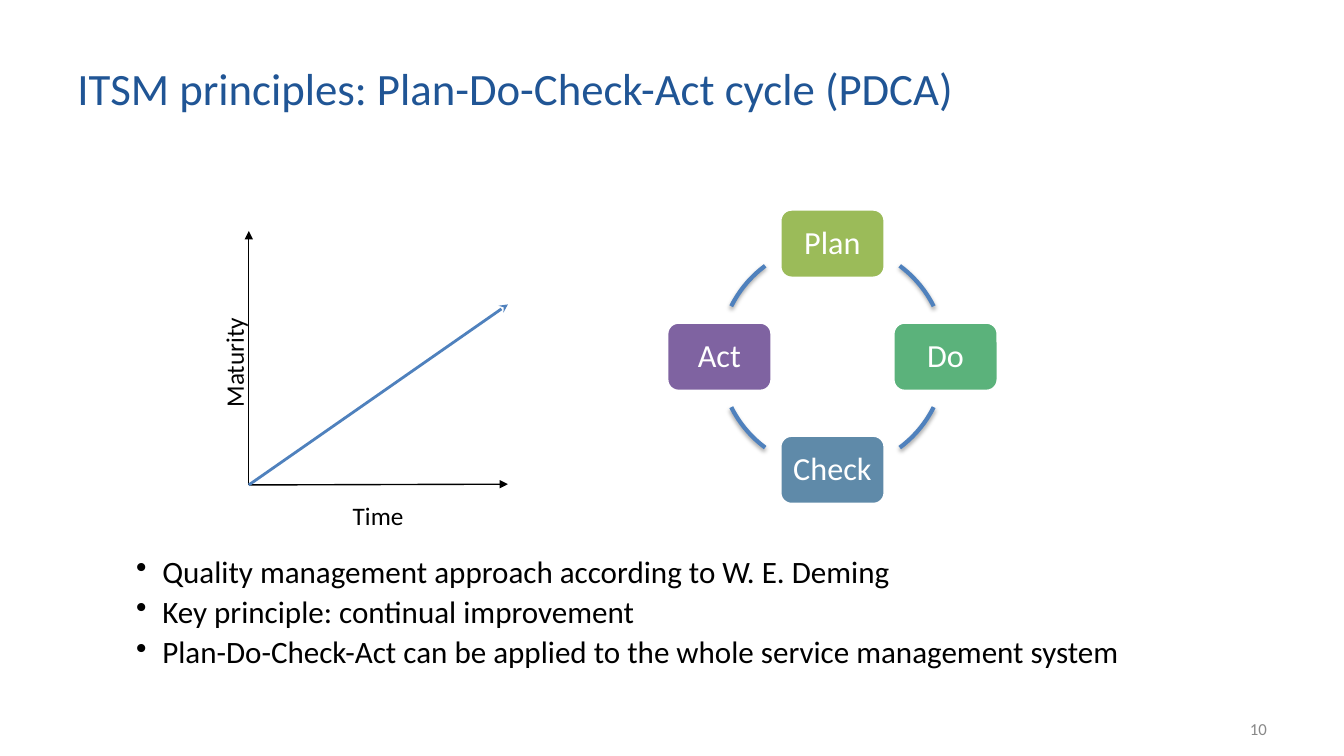
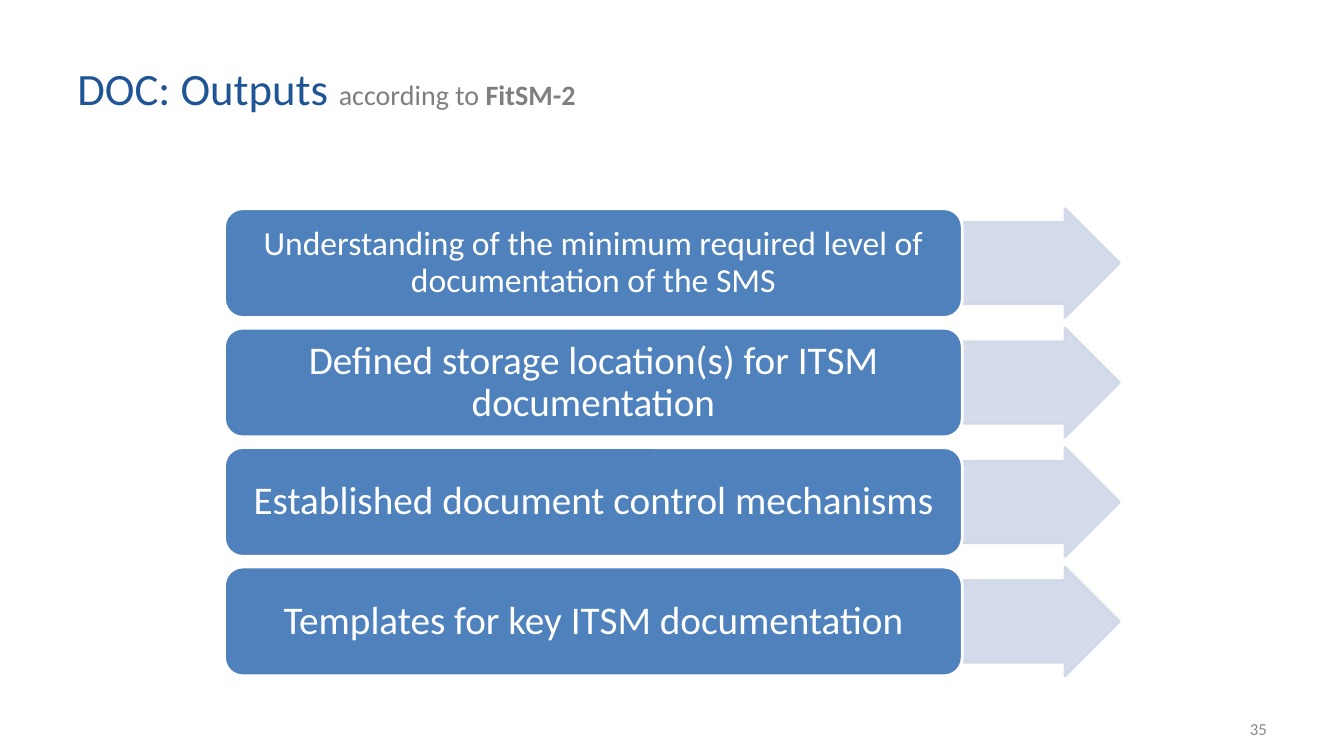
from lxml import etree
from pptx import Presentation
from pptx.dml.color import RGBColor
from pptx.enum.shapes import MSO_CONNECTOR as Connector, MSO_SHAPE as Shape
from pptx.enum.text import MSO_ANCHOR as Anchor, PP_ALIGN as Align
from pptx.oxml import parse_xml
from pptx.oxml.ns import nsdecls, qn
from pptx.util import Cm, Pt

FONT = "Calibri"
COLORS = {
    "title": "205595",
    "subtitle": "7F7F7F",
    "number": "888888",
    "black": "000000",
    "white": "FFFFFF",
    "blue": "4F81BD",
    "pale": "D0D8E8",
    "plan": "9BBB59",
    "do": "5BB27B",
    "check": "5F8AA9",
    "act": "7F63A1",
}
RGB = {name: RGBColor.from_string(value) for name, value in COLORS.items()}


def style_font(font, size, color, bold=None):
    font.name = FONT
    font.size = Pt(size)
    font.color.rgb = RGB[color]
    font.bold = bold


def add_box(slide, kind, left, top, width, height, fill=None, line="white", line_width=2):
    """Add a preset shape, or a wrapping text box if kind is None; lengths in cm."""
    place = [Cm(value) for value in (left, top, width, height)]
    if kind is None:
        box = slide.shapes.add_textbox(*place)
        box.text_frame.word_wrap = True
        return box
    box = slide.shapes.add_shape(kind, *place)
    box.shadow.inherit = False
    if fill:
        box.fill.solid()
        box.fill.fore_color.rgb = RGB[fill]
    else:
        box.fill.background()
    box.line.color.rgb = RGB[line]
    box.line.width = Pt(line_width)
    return box


presentation = Presentation()
presentation.slide_width = Cm(33.87)
presentation.slide_height = Cm(19.05)

# Each title is a list of runs: text, size, colour, bold
pages = [
    ("10", [("ITSM principles: Plan-Do-Check-Act cycle (PDCA)", 32, "title", None)]),
    ("35", [("DOC: Outputs ", 32, "title", None),
            ("according to ", 20, "subtitle", None),
            ("FitSM-2", 20, "subtitle", True)]),
]
slides = []
for number, title_runs in pages:
    slide = presentation.slides.add_slide(presentation.slide_layouts[6])
    slides.append(slide)

    title = add_box(slide, None, 1.7, 0.76, 25.17, 2.92).text_frame
    title.vertical_anchor = Anchor.MIDDLE
    for text, size, color, bold in title_runs:
        run = title.paragraphs[0].add_run()
        run.text = text
        style_font(run.font, size, color, bold)

    footer = add_box(slide, None, 24.28, 17.86, 7.9, 1.02).text_frame
    footer.vertical_anchor = Anchor.MIDDLE
    paragraph = footer.paragraphs[0]
    paragraph.text = number
    paragraph.alignment = Align.RIGHT
    style_font(paragraph.font, 12, "number")

cycle_slide, outputs_slide = slides

# Key points
bullets = [
    "Quality management approach according to W. E. Deming",
    "Key principle: continual improvement",
    "Plan-Do-Check-Act can be applied to the whole service management system",
]
body = add_box(cycle_slide, None, 3.1, 13.89, 27.43, 3.81).text_frame
for index, text in enumerate(bullets):
    paragraph = body.paragraphs[0] if index == 0 else body.add_paragraph()
    paragraph.text = text
    properties = paragraph._p.get_or_add_pPr()
    properties.set("marL", str(Cm(0.74)))
    properties.set("indent", str(Cm(-0.66)))
    bullet = etree.SubElement(properties, qn("a:buChar"))
    bullet.set("char", "•")
    paragraph.line_spacing = 0.9
    if index:
        paragraph.space_before = Pt(4.8)
    style_font(paragraph.font, 22.2, "black")

# Maturity over time: two axes and a rising line from one origin
origin = (6.27, 12.22)
chart_lines = [
    ((12.8, 12.2), "black", 1, "triangle"),
    ((6.27, 5.82), "black", 1, "triangle"),
    ((12.8, 7.67), "blue", 2, "stealth"),
]
for end, color, width, head in chart_lines:
    arrow = cycle_slide.shapes.add_connector(
        Connector.STRAIGHT, *(Cm(value) for value in origin + end))
    arrow.line.color.rgb = RGB[color]
    arrow.line.width = Pt(width)
    etree.SubElement(arrow.line._get_or_add_ln(), qn("a:tailEnd")).set("type", head)
    etree.SubElement(arrow._element.spPr, qn("a:effectLst"))

axis_labels = [("Maturity", 4.75, 8.74, 2.29, 270), ("Time", 8.89, 12.6, 1.3, 0)]
for text, left, top, width, rotation in axis_labels:
    label = add_box(cycle_slide, None, left, top, width, 0.76)
    label.rotation = rotation
    frame = label.text_frame
    frame.word_wrap = False
    frame.margin_left = frame.margin_right = frame.margin_top = frame.margin_bottom = 0
    paragraph = frame.paragraphs[0]
    paragraph.text = text
    style_font(paragraph.font, 18, "black")

# Cycle: four steps on a circle, joined by shadowed arcs
center_x, center_y, radius = 20.98, 8.99, 2.85
step_width, step_height = 2.64, 1.73
arc_half_angle = 13.5
arc_shadow = (
    f'<a:effectLst {nsdecls("a")}>'
    f'<a:outerShdw blurRad="{Pt(3.1)}" dist="{Pt(1.8)}" dir="5400000" rotWithShape="0">'
    f'<a:srgbClr val="{COLORS["black"]}"><a:alpha val="35000"/></a:srgbClr>'
    '</a:outerShdw></a:effectLst>'
)
for middle in (40, 140, 220, 320):
    arc = add_box(cycle_slide, Shape.ARC, center_x - radius, center_y - radius,
                  2 * radius, 2 * radius, line="blue", line_width=3)
    # Adjustments count in 100000ths, angles in 60000ths of a degree
    arc.adjustments[0] = (middle - arc_half_angle) * 0.6
    arc.adjustments[1] = (middle + arc_half_angle) * 0.6
    properties = arc._element.spPr
    properties.replace(properties.find(qn("a:effectLst")), parse_xml(arc_shadow))

steps = [("Plan", 0, -1), ("Do", 1, 0), ("Check", 0, 1), ("Act", -1, 0)]
for text, across, down in steps:
    step = add_box(cycle_slide, Shape.ROUNDED_RECTANGLE,
                   center_x + across * radius - step_width / 2,
                   center_y + down * radius - step_height / 2,
                   step_width, step_height, text.lower())
    frame = step.text_frame
    frame.margin_left = frame.margin_right = 0
    paragraph = frame.paragraphs[0]
    paragraph.text = text
    paragraph.alignment = Align.CENTER
    paragraph.line_spacing = 0.9
    style_font(paragraph.font, 23, "white")

# Outputs: rows of a box with an arrow behind its right edge
outputs = [
    ("Understanding of the minimum required level of documentation of the SMS", 24),
    ("Defined storage location(s) for ITSM documentation", 28),
    ("Established document control mechanisms", 28),
    ("Templates for key ITSM documentation", 28),
]
row_top, row_pitch, row_height = 5.26, 3.01, 2.74
for index, (text, size) in enumerate(outputs):
    top = row_top + index * row_pitch
    arrow = add_box(outputs_slide, Shape.RIGHT_ARROW, 24.23, top, 3.98, row_height,
                    "pale", "pale")
    arrow.adjustments[0] = 0.75
    arrow.adjustments[1] = 0.5
    for color in arrow._element.spPr.iter(qn("a:srgbClr")):
        etree.SubElement(color, qn("a:alpha")).set("val", "90000")

    output = add_box(outputs_slide, Shape.ROUNDED_RECTANGLE, 5.66, top, 18.59, row_height, "blue")
    frame = output.text_frame
    frame.margin_left = frame.margin_right = Cm(0.3)
    paragraph = frame.paragraphs[0]
    paragraph.text = text
    paragraph.alignment = Align.CENTER
    paragraph.line_spacing = 0.9
    style_font(paragraph.font, size, "white")

presentation.save("out.pptx")
